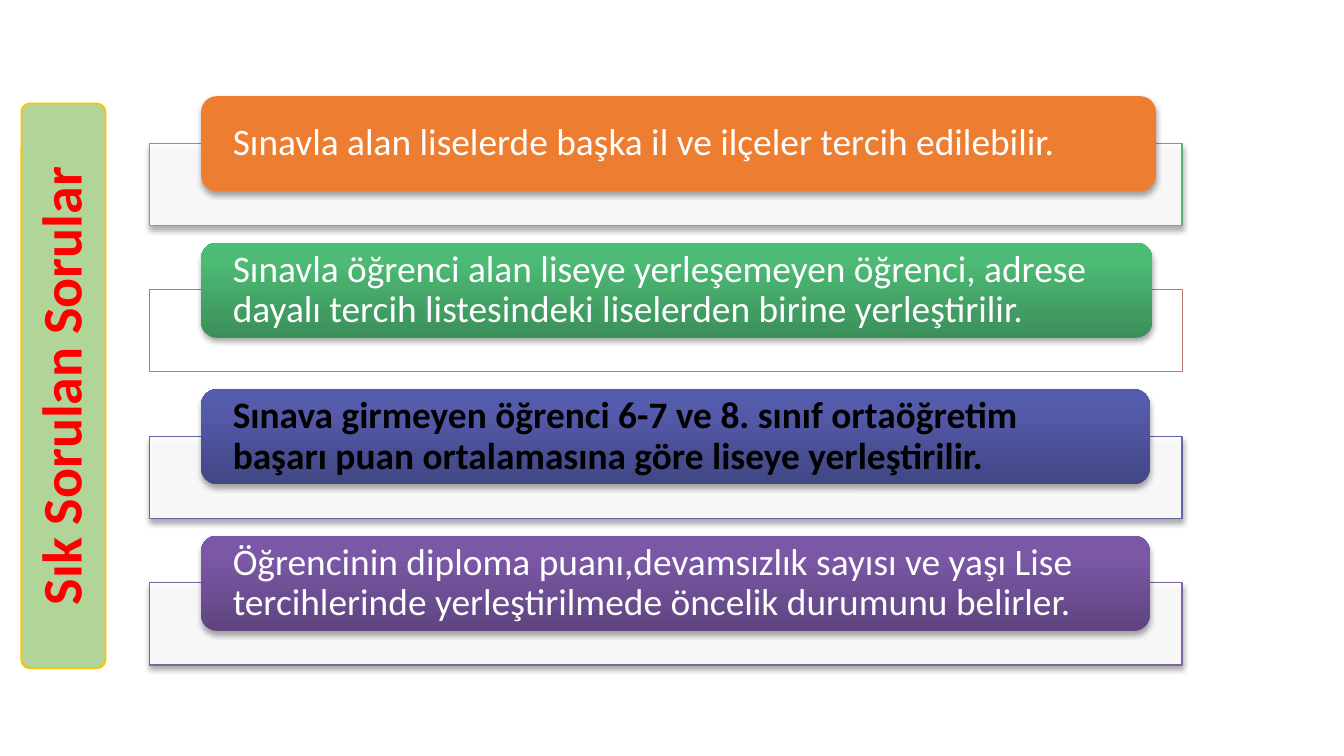
"""Build a slide of four answer cards beside an upright title."""
from dataclasses import dataclass

from lxml import etree
from pptx import Presentation
from pptx.dml.color import RGBColor
from pptx.enum.shapes import MSO_SHAPE
from pptx.enum.text import MSO_ANCHOR, MSO_AUTO_SIZE, PP_ALIGN
from pptx.oxml.ns import qn
from pptx.shapes.autoshape import Shape
from pptx.slide import Slide
from pptx.util import Emu, Pt

RECT, ROUND = MSO_SHAPE.RECTANGLE, MSO_SHAPE.ROUNDED_RECTANGLE
MIDDLE, NO_FIT = MSO_ANCHOR.MIDDLE, MSO_AUTO_SIZE.NONE
LEFT, CENTER = PP_ALIGN.LEFT, PP_ALIGN.CENTER
PX = 3175
WIDE, HIGH = 2880, 1620
FIRST, PITCH = 206, 314


@dataclass(frozen=True)
class Theme:
    """Hold the colours and type sizes."""
    font: str = "Calibri"
    white: str = "FFFFFF"
    black: str = "000000"
    red: str = "FF0000"
    band: str = "A9D18E"
    gold: str = "FFC000"
    body: int = 20
    title: int = 30


@dataclass(frozen=True)
class Card:
    """Describe one answer and the frame behind it."""
    text: str
    wide: int
    fill: tuple[str, ...]
    line: str
    ink: str = Theme.white
    bold: bool = False
    thick: float = 0.75
    raised: bool = True


THEME = Theme()
CARDS = (
    Card("Sınavla alan liselerde başka il ve ilçeler tercih edilebilir.",
         2046, ("ED7D31",), "5CB37C"),
    Card("Sınavla öğrenci alan liseye yerleşemeyen öğrenci, adrese dayalı "
         "tercih listesindeki liselerden birine yerleştirilir.",
         2038, ("3B8F5A", "4DBA75", "4BBD75"), "BB7676",
         thick=0.5, raised=False),
    Card("Sınava girmeyen öğrenci 6-7 ve 8. sınıf ortaöğretim başarı puan "
         "ortalamasına göre liseye yerleştirilir.",
         2033, ("414684", "555BAB", "545AAE"), "6267A6",
         ink=THEME.black, bold=True),
    Card("Öğrencinin diploma puanı,devamsızlık sayısı ve yaşı Lise "
         "tercihlerinde yerleştirilmede öncelik durumunu belirler.",
         2033, ("5F4480", "7B58A6", "7C57A8"), "8064A2"),
)


def tint(node: etree._Element, color: str, alpha: int = 100) -> None:
    """Add a colour with its opacity to an XML node."""
    rgb = etree.SubElement(node, qn("a:srgbClr"), val=color)
    if alpha < 100:
        etree.SubElement(rgb, qn("a:alpha"), val=str(alpha * 1000))


def paint(shape: Shape, stops: tuple[str, ...], alpha: int = 100) -> None:
    """Fill a shape with one colour or an upward gradient."""
    if len(stops) == 1:
        shape.fill.solid()
        shape.fill.fore_color.rgb = RGBColor.from_string(stops[0])
        node = shape.element.spPr.find(qn("a:solidFill"))
        node.clear()
        tint(node, stops[0], alpha)
        return
    shape.fill.gradient()
    shape.fill.gradient_angle = 90
    ramp = shape.element.spPr.find(".//" + qn("a:gsLst"))
    ramp.clear()
    for place, color in zip((0, 80, 100), stops):
        tint(etree.SubElement(ramp, qn("a:gs"), pos=str(place * 1000)), color)


def lift(shape: Shape) -> None:
    """Give a shape a soft shadow below."""
    glow = shape.element.spPr.find(qn("a:effectLst"))
    shade = etree.SubElement(
        glow, qn("a:outerShdw"), blurRad=str(Pt(3.1)), dist=str(Pt(1.8)),
        dir="5400000", rotWithShape="0")
    tint(shade, THEME.black, 35)


def place(shape: Shape, x: int, y: int, w: int, h: int) -> None:
    """Move and size a shape in px."""
    shape.left, shape.top = Emu(x * PX), Emu(y * PX)
    shape.width, shape.height = Emu(w * PX), Emu(h * PX)


def box(slide: Slide, kind: MSO_SHAPE, x: int, y: int, w: int, h: int,
        line: str = "", thick: float = 1) -> Shape:
    """Add a flat shape, with an outline if a colour is given."""
    shape = slide.shapes.add_shape(kind, 0, 0, 0, 0)
    place(shape, x, y, w, h)
    shape.shadow.inherit = False
    if line:
        shape.line.color.rgb = RGBColor.from_string(line)
        shape.line.width = Pt(thick)
    else:
        shape.line.fill.background()
    return shape


def write(shape: Shape, text: str, size: int, ink: str, bold: bool,
          align: PP_ALIGN, side: int) -> None:
    """Set and format the text of a shape."""
    frame = shape.text_frame
    frame.text = text
    frame.word_wrap = True
    frame.auto_size = NO_FIT
    frame.vertical_anchor = MIDDLE
    frame.margin_left = frame.margin_right = Emu(side * PX)
    frame.margin_top = frame.margin_bottom = 0
    para = frame.paragraphs[0]
    para.alignment = align
    para.line_spacing = 0.9
    font = para.runs[0].font
    font.name, font.size, font.bold = THEME.font, Pt(size), bold
    font.color.rgb = RGBColor.from_string(ink)


def draw_card(slide: Slide, card: Card, top: int) -> None:
    """Draw a frame with its answer card over it."""
    frame = box(slide, RECT, 320, top + 101, 2213, 176, card.line, card.thick)
    paint(frame, (THEME.white,), 90)
    if card.raised:
        lift(frame)
    face = box(slide, ROUND, 431, top, card.wide, 204)
    paint(face, card.fill)
    lift(face)
    write(face, card.text, THEME.body, card.ink, card.bold, LEFT, 58)


def draw_title(slide: Slide) -> None:
    """Draw the side band and the title turned upright on it."""
    band = box(slide, ROUND, 46, 222, 180, 1210, THEME.gold)
    band.adjustments[0] = 0.1
    paint(band, (THEME.band,), 90)
    title = slide.shapes.title
    band.element.addnext(title.element)
    long, deep = 1138, 172
    place(title, 136 - long // 2, 827 - deep // 2, long, deep)
    title.rotation = 270
    write(title, "Sık Sorulan Sorular", THEME.title, THEME.red, True,
          CENTER, 43)


def main() -> None:
    """Build and save the slide."""
    deck = Presentation()
    deck.slide_width, deck.slide_height = Emu(WIDE * PX), Emu(HIGH * PX)
    slide = deck.slides.add_slide(deck.slide_layouts[5])
    for row, card in enumerate(CARDS):
        draw_card(slide, card, FIRST + row * PITCH)
    draw_title(slide)
    deck.save("out.pptx")


if __name__ == "__main__":
    main()
